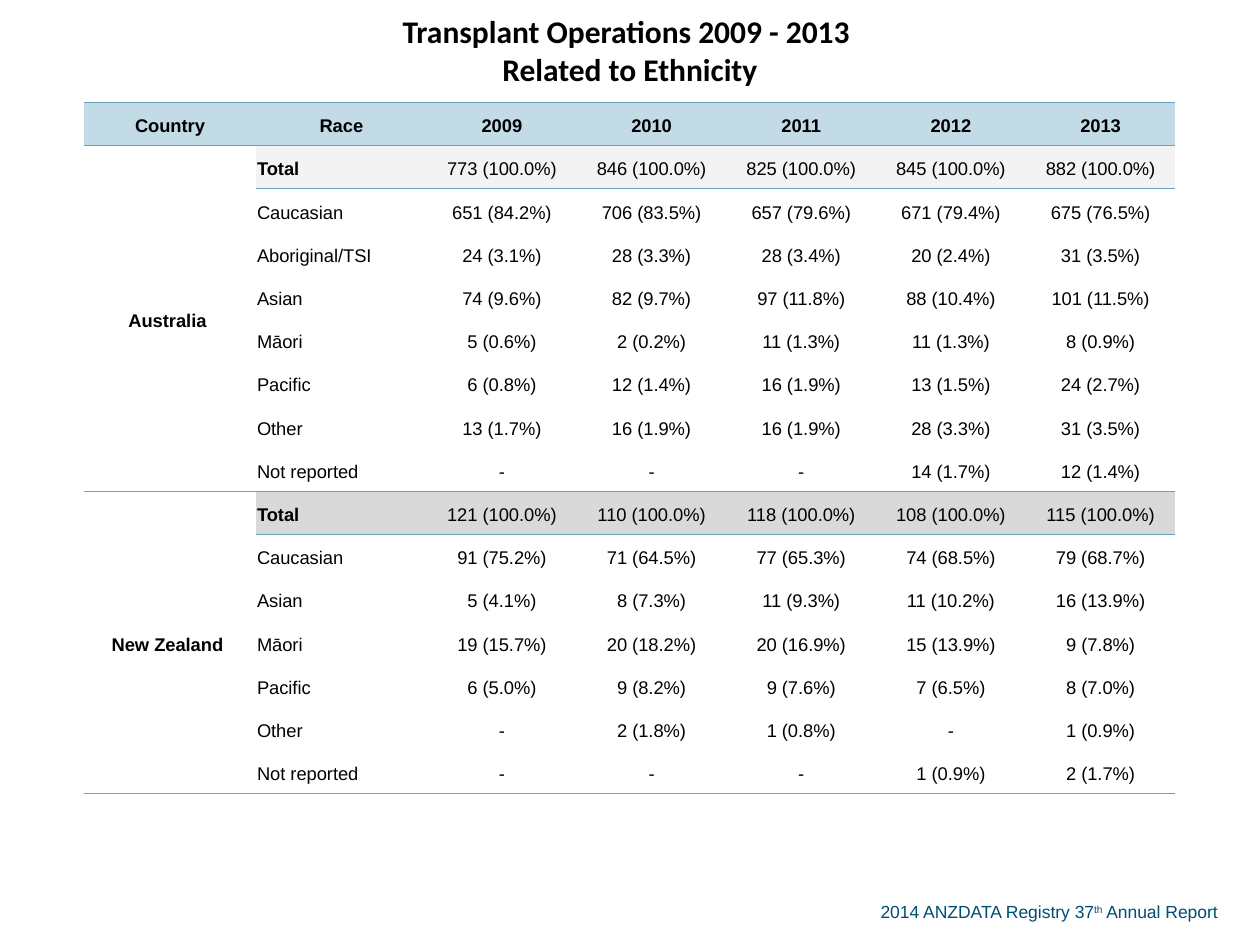
from dataclasses import dataclass

from lxml import etree
from pptx import Presentation
from pptx.dml.color import RGBColor
from pptx.enum.text import MSO_ANCHOR, PP_ALIGN
from pptx.oxml.ns import qn
from pptx.util import Inches, Pt

CENTER, LEFT = PP_ALIGN.CENTER, PP_ALIGN.LEFT
MIDDLE = MSO_ANCHOR.MIDDLE


@dataclass(frozen=True)
class Theme:
    black: str = "000000"
    white: str = "FFFFFF"
    rule: str = "66A3C2"
    header: str = "C2DBE7"
    source: str = "004D73"
    title_font: str = "Calibri"
    body_font: str = "Arial"
    title_size: float = 18
    body_size: float = 10.5
    source_size: float = 10
    rule_width: float = 0.5


THEME = Theme()
TITLE = "Transplant Operations 2009 - 2013 \nRelated to Ethnicity"
HEADINGS = ("Country", "Race", "2009", "2010", "2011", "2012", "2013")
COUNTRIES = (
    ("Australia ", "F3F3F3", (
        ("Total", "773 (100.0%)", "846 (100.0%)", "825 (100.0%)", "845 (100.0%)", "882 (100.0%)"),
        ("Caucasian", "651 (84.2%)", "706 (83.5%)", "657 (79.6%)", "671 (79.4%)", "675 (76.5%)"),
        ("Aboriginal/TSI", "24 (3.1%)", "28 (3.3%)", "28 (3.4%)", "20 (2.4%)", "31 (3.5%)"),
        ("Asian", "74 (9.6%)", "82 (9.7%)", "97 (11.8%)", "88 (10.4%)", "101 (11.5%)"),
        ("Māori", "5 (0.6%)", "2 (0.2%)", "11 (1.3%)", "11 (1.3%)", "8 (0.9%)"),
        ("Pacific", "6 (0.8%)", "12 (1.4%)", "16 (1.9%)", "13 (1.5%)", "24 (2.7%)"),
        ("Other", "13 (1.7%)", "16 (1.9%)", "16 (1.9%)", "28 (3.3%)", "31 (3.5%)"),
        ("Not reported", "-", "-", "-", "14 (1.7%)", "12 (1.4%)"),
    )),
    ("New Zealand ", "D9D9D9", (
        ("Total", "121 (100.0%)", "110 (100.0%)", "118 (100.0%)", "108 (100.0%)", "115 (100.0%)"),
        ("Caucasian", "91 (75.2%)", "71 (64.5%)", "77 (65.3%)", "74 (68.5%)", "79 (68.7%)"),
        ("Asian", "5 (4.1%)", "8 (7.3%)", "11 (9.3%)", "11 (10.2%)", "16 (13.9%)"),
        ("Māori", "19 (15.7%)", "20 (18.2%)", "20 (16.9%)", "15 (13.9%)", "9 (7.8%)"),
        ("Pacific", "6 (5.0%)", "9 (8.2%)", "9 (7.6%)", "7 (6.5%)", "8 (7.0%)"),
        ("Other", "-", "2 (1.8%)", "1 (0.8%)", "-", "1 (0.9%)"),
        ("Not reported", "-", "-", "-", "1 (0.9%)", "2 (1.7%)"),
    )),
)
ROW_COUNT = 2 + sum(len(races) for _, _, races in COUNTRIES)
TABLE_WIDTH, TABLE_HEIGHT = 8.66, 6.3
LABEL_WIDTH, TITLE_HEIGHT = 1.36, 0.81


def format_font(font, name, size, color, bold=False):
    font.name = name
    font.size = Pt(size)
    font.bold = bold
    font.color.rgb = RGBColor.from_string(color)


def set_borders(cell, top, bottom):
    properties = cell._tc.get_or_add_tcPr()
    for edge, ruled in (("L", False), ("R", False), ("T", top), ("B", bottom)):
        line = etree.SubElement(properties, qn(f"a:ln{edge}"), w=str(Pt(THEME.rule_width)))
        if ruled:
            fill = etree.SubElement(line, qn("a:solidFill"))
            etree.SubElement(fill, qn("a:srgbClr"), val=THEME.rule)
        else:
            etree.SubElement(line, qn("a:noFill"))


def style_cell(cell, fill=None, top=False, bottom=False):
    cell.vertical_anchor = MIDDLE
    cell.margin_left = cell.margin_top = cell.margin_right = Inches(0.01)
    cell.margin_bottom = 0
    set_borders(cell, top, bottom)
    if fill:
        cell.fill.solid()
        cell.fill.fore_color.rgb = RGBColor.from_string(fill)
    else:
        cell.fill.background()


def write_cell(cell, text, bold=False, align=CENTER):
    cell.text_frame.text = text
    paragraph = cell.text_frame.paragraphs[0]
    paragraph.alignment = align
    paragraph.line_spacing = 1.19
    paragraph.space_after = Pt(14)
    format_font(paragraph.runs[0].font, THEME.body_font, THEME.body_size, THEME.black, bold)


def add_grid(slide):
    table = slide.shapes.add_table(
        ROW_COUNT, len(HEADINGS), Inches(0.67), 0, Inches(TABLE_WIDTH), Inches(TABLE_HEIGHT)
    ).table
    table.first_row = table.horz_banding = False
    year_width = (TABLE_WIDTH - 2 * LABEL_WIDTH) / (len(HEADINGS) - 2)
    for index, column in enumerate(table.columns):
        column.width = Inches(LABEL_WIDTH if index < 2 else year_width)
    for index, row in enumerate(table.rows):
        body_height = (TABLE_HEIGHT - TITLE_HEIGHT) / (ROW_COUNT - 1)
        row.height = Inches(body_height if index else TITLE_HEIGHT)
    return table


def fill_title(table):
    title = table.cell(0, 0)
    title.merge(table.cell(0, len(HEADINGS) - 1))
    for cell in table.rows[0].cells:
        style_cell(cell, bottom=True)
    title.text_frame.text = TITLE
    for paragraph in title.text_frame.paragraphs:
        paragraph.alignment = CENTER
        format_font(paragraph.runs[0].font, THEME.title_font, THEME.title_size, THEME.black, True)


def fill_headings(table):
    for cell, heading in zip(table.rows[1].cells, HEADINGS):
        style_cell(cell, THEME.header, top=True, bottom=True)
        write_cell(cell, heading, bold=True)


def fill_country(table, first_row, country, total_fill, races):
    last = len(races) - 1
    country_cell = table.cell(first_row, 0)
    country_cell.merge(table.cell(first_row + last, 0))
    write_cell(country_cell, country, bold=True)
    for offset, values in enumerate(races):
        is_total = offset == 0
        style_cell(table.cell(first_row + offset, 0), THEME.white,
                   top=is_total, bottom=offset in (0, last))
        for column, value in enumerate(values, start=1):
            cell = table.cell(first_row + offset, column)
            style_cell(cell, total_fill if is_total else None,
                       top=offset < 2, bottom=offset in (0, last))
            is_race = column == 1
            write_cell(cell, value, is_total and is_race, LEFT if is_race else CENTER)


def add_source(slide):
    frame = slide.shapes.add_textbox(
        Inches(6.89), Inches(7.1), Inches(2.99), Inches(0.27)).text_frame
    frame.word_wrap = True
    for text, baseline in (("2014 ANZDATA Registry 37", 0), ("th", 30000), (" Annual Report", 0)):
        run = frame.paragraphs[0].add_run()
        run.text = text
        format_font(run.font, THEME.body_font, THEME.source_size, THEME.source)
        if baseline:
            run._r.get_or_add_rPr().set("baseline", str(baseline))


def main():
    presentation = Presentation()
    presentation.slide_width, presentation.slide_height = Inches(10), Inches(7.5)
    slide = presentation.slides.add_slide(presentation.slide_layouts[6])
    add_source(slide)
    table = add_grid(slide)
    fill_title(table)
    fill_headings(table)
    first_row = 2
    for country, total_fill, races in COUNTRIES:
        fill_country(table, first_row, country, total_fill, races)
        first_row += len(races)
    presentation.save("out.pptx")


if __name__ == "__main__":
    main()
